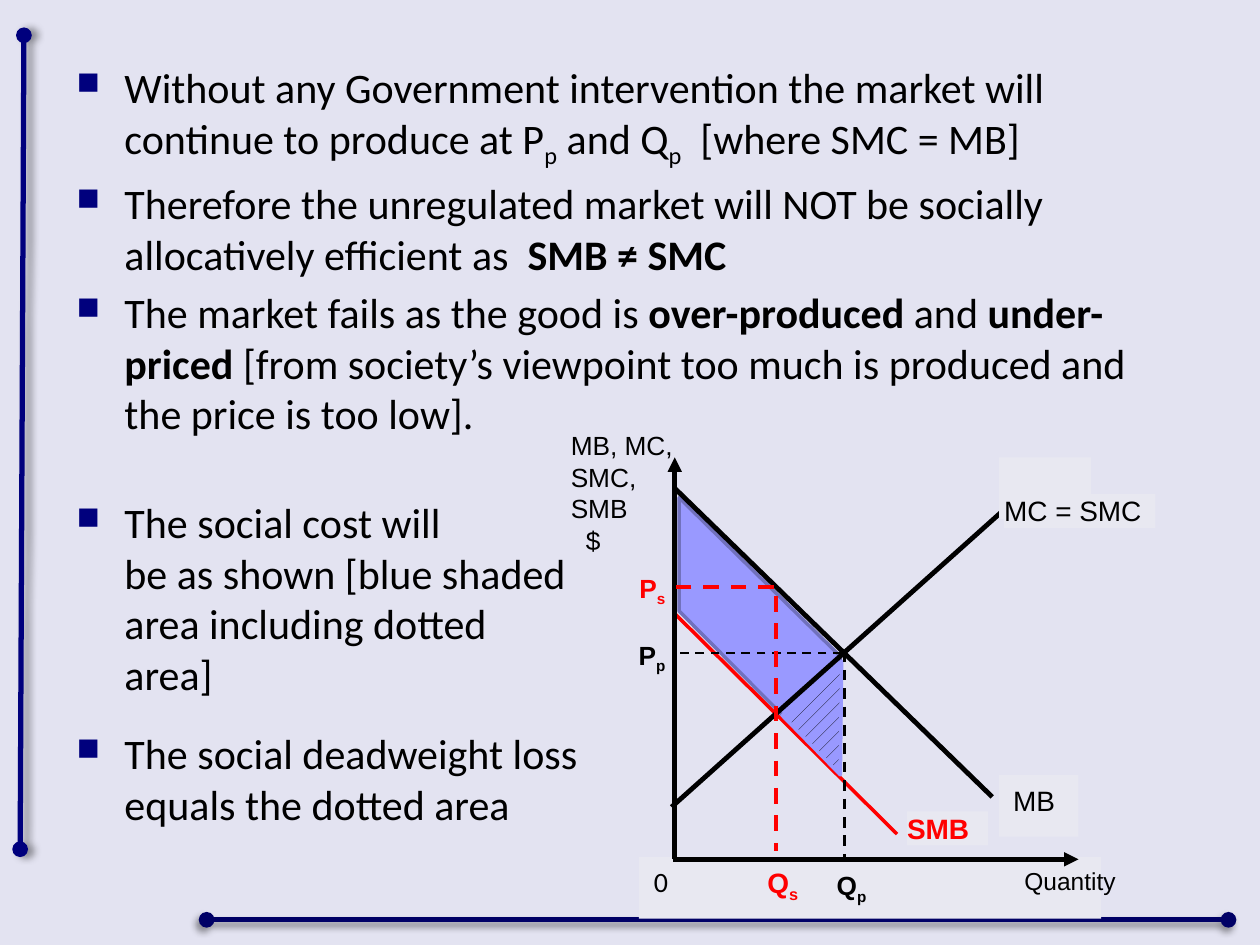
from dataclasses import dataclass

from lxml import etree
from pptx import Presentation
from pptx import util as u
from pptx.dml.color import RGBColor
from pptx.enum import dml, shapes, text
from pptx.oxml.ns import qn

COLUMNS, ROWS = 100, 75
WIDTH, HEIGHT = u.Inches(10), u.Inches(7.5)


@dataclass(frozen=True)
class Theme:
    background: str = "E3E3F1"
    panel: str = "E8E8F1"
    ink: str = "000000"
    social: str = "FF0000"
    bullet: str = "00007D"
    rule: str = "000066"
    shade: str = "9999FF"
    shade_edge: str = "7171BD"
    body_font: str = "Calibri"
    label_font: str = "Arial"
    body_size: float = 24
    label_size: float = 16
    axis_size: float = 15
    small_size: float = 14
    curve_width: float = 2.75


THEME = Theme()
# Run styles
PLAIN, BOLD, SUB, BOLD_SUB = (False, False), (True, False), (False, True), (True, True)


def rgb(value):
    return RGBColor.from_string(value)


def col(n):
    return u.Emu(round(WIDTH * n / COLUMNS))


def row(n):
    return u.Emu(round(HEIGHT * n / ROWS))


def place(left, top, width, height):
    return col(left), row(top), col(width), row(height)


def add_child(parent, tag, **attributes):
    return etree.SubElement(parent, qn(tag), attributes)


def add_run(paragraph, words, style, size, color, font):
    """Add one run; a line feed inside the words becomes a line break."""
    bold, subscript = style
    for index, part in enumerate(words.split("\n")):
        if index:
            paragraph.add_line_break()
        run = paragraph.add_run()
        run.text = part
        run.font.name, run.font.size = font, u.Pt(size)
        run.font.bold = bold
        run.font.color.rgb = rgb(color)
        if subscript:
            run._r.get_or_add_rPr().set("baseline", "-25000")


def set_bullet(paragraph, indent):
    properties = paragraph._p.get_or_add_pPr()
    properties.set("marL", str(indent))
    properties.set("indent", str(-indent))
    color = add_child(properties, "a:buClr")
    add_child(color, "a:srgbClr", val=THEME.bullet)
    add_child(properties, "a:buSzPct", val="75000")
    add_child(properties, "a:buChar", char="■")


def add_bullets(slide, box, items):
    frame = slide.shapes.add_textbox(*place(*box)).text_frame
    frame.word_wrap = True
    for index, (space, runs) in enumerate(items):
        paragraph = frame.paragraphs[0] if index == 0 else frame.add_paragraph()
        set_bullet(paragraph, col(3.8))
        paragraph.space_before = u.Pt(space)
        for words, style in runs:
            add_run(paragraph, words, style, THEME.body_size, THEME.ink, THEME.body_font)


def add_panel(slide, box):
    panel = slide.shapes.add_shape(shapes.MSO_SHAPE.RECTANGLE, *place(*box))
    panel.shadow.inherit = False
    panel.fill.solid()
    panel.fill.fore_color.rgb = rgb(THEME.panel)
    panel.line.fill.background()
    return panel


def add_label(slide, box, paragraphs, size, color=THEME.ink, font=THEME.label_font, panel=False):
    """Add a label without margins; paragraphs is a list of lists of runs."""
    shape = add_panel(slide, box) if panel else slide.shapes.add_textbox(*place(*box))
    frame = shape.text_frame
    frame.word_wrap = True
    frame.vertical_anchor = text.MSO_ANCHOR.TOP
    frame.margin_left = frame.margin_right = frame.margin_top = frame.margin_bottom = 0
    for index, runs in enumerate(paragraphs):
        paragraph = frame.paragraphs[0] if index == 0 else frame.add_paragraph()
        paragraph.alignment = text.PP_ALIGN.LEFT
        for words, style in runs:
            add_run(paragraph, words, style, size, color, font)
    return frame


def add_line(slide, start, end, color, width, dashed=False, head=None, tail=None, shadow=None):
    line = slide.shapes.add_connector(
        shapes.MSO_CONNECTOR.STRAIGHT, col(start[0]), row(start[1]), col(end[0]), row(end[1]))
    line.line.color.rgb = rgb(color)
    line.line.width = u.Pt(width)
    if dashed:
        line.line.dash_style = dml.MSO_LINE.DASH
    properties = line._element.spPr
    outline = properties.find(qn("a:ln"))
    for tag, kind in (("a:headEnd", head), ("a:tailEnd", tail)):
        if kind:
            add_child(outline, tag, type=kind)
    effects = add_child(properties, "a:effectLst")
    if shadow is not None:
        cast = add_child(effects, "a:outerShdw", blurRad=str(u.Pt(4)), dist=str(u.Pt(3)),
                         dir=str(shadow * 60000), algn="ctr", rotWithShape="0")
        tint = add_child(cast, "a:srgbClr", val=THEME.ink)
        add_child(tint, "a:alpha", val="40000")


def add_area(slide, points, edge, dotted=False):
    corners = [(col(x), row(y)) for x, y in points]
    builder = slide.shapes.build_freeform(*corners[0])
    builder.add_line_segments(corners[1:], close=True)
    area = builder.convert_to_shape()
    area.shadow.inherit = False
    if dotted:
        area.fill.patterned()
        area.fill.pattern = dml.MSO_PATTERN.PERCENT_10
        area.fill.fore_color.rgb = rgb(THEME.ink)
        area.fill.back_color.rgb = rgb(THEME.shade)
    else:
        area.fill.solid()
        area.fill.fore_color.rgb = rgb(THEME.shade)
    area.line.color.rgb = rgb(edge)
    area.line.width = u.Pt(2)


def add_frame_rules(slide):
    for start, end, color, angle in (((1.9, 2.8), (1.6, 67.4), THEME.bullet, 0),
                                     ((16.4, 73), (97.5, 73), THEME.rule, 135)):
        add_line(slide, start, end, color, 3, head="oval", tail="oval", shadow=angle)


def add_diagram(slide):
    # Social benefit curve and shaded cost areas
    add_line(slide, (53.45, 48.6), (71.2, 66.2), THEME.social, 2)
    add_label(slide, (72, 64.4, 6.4, 2.7), [[("SMB", BOLD)]], THEME.label_size,
              THEME.social, panel=True)
    add_area(slide, [(53.9, 39.5), (66.7, 52.1), (66.6, 61.3), (53.9, 48.5)], THEME.shade_edge)
    add_area(slide, [(66.7, 61.5), (62.1, 56.8), (66.8, 52.5)], THEME.shade, dotted=True)

    # Axis labels
    add_panel(slide, (50.7, 68, 36.7, 4.9))
    add_label(slide, (51.9, 68.6, 3.4, 3.3), [[("0", PLAIN)]], THEME.label_size,
              font=THEME.body_font)
    add_label(slide, (60.9, 68.7, 4, 2.7), [[("Q", BOLD), ("s", BOLD_SUB)]],
              THEME.label_size, THEME.social)
    add_label(slide, (66.4, 69, 4, 2.5), [[("Q", BOLD), ("p", BOLD_SUB)]], THEME.axis_size)
    add_label(slide, (81.3, 68.7, 8, 2.7), [[("Quantity", PLAIN)]], THEME.small_size)
    units = add_label(slide, (45.3, 34.1, 10.9, 10.1),
                      [[(name, PLAIN)] for name in ("MB, MC,", "SMC,", "SMB", "$")],
                      THEME.axis_size)
    units.paragraphs[-1]._p.get_or_add_pPr().set("marL", str(col(1.2)))
    for top, letter, color in ((45.4, "s", THEME.social), (50.7, "p", THEME.ink)):
        price = add_label(slide, (47.5, top, 5.3, 2.7), [[("P", BOLD), (letter, BOLD_SUB)]],
                          THEME.axis_size, color)
        price.paragraphs[0].alignment = text.PP_ALIGN.RIGHT

    # Axes and curves
    for start, end, arrow in (((53.4, 68.2), (85.6, 68.2), "triangle"),
                              ((53.55, 68.2), (53.55, 36.3), "triangle"),
                              ((53.3, 64.05), (80.7, 39.55), None),
                              ((53.55, 38.75), (78.75, 63.25), None)):
        add_line(slide, start, end, THEME.ink, THEME.curve_width, tail=arrow)

    # Curve labels
    add_panel(slide, (79.3, 61.5, 6.3, 4.9))
    add_label(slide, (80.4, 62.2, 4, 2.7), [[("MB", PLAIN)]], THEME.label_size)
    add_panel(slide, (79.3, 36.3, 7.3, 4.9))
    add_label(slide, (79.7, 39.2, 12, 2.7), [[("MC = SMC", PLAIN)]], THEME.label_size, panel=True)

    # Dashed guides from the two equilibria to the axes
    for start, end, color, width in (((66.8, 51.85), (53.4, 51.85), THEME.ink, 1.25),
                                     ((67, 51.7), (67, 68), THEME.ink, 1.5),
                                     ((61.6, 47.3), (61.6, 67.5), THEME.social, 2.25),
                                     ((61.4, 46.6), (53.6, 46.6), THEME.social, 2.25)):
        add_line(slide, start, end, color, width, dashed=True)


def main():
    presentation = Presentation()
    presentation.slide_width, presentation.slide_height = WIDTH, HEIGHT
    slide = presentation.slides.add_slide(presentation.slide_layouts[6])
    slide.background.fill.solid()
    slide.background.fill.fore_color.rgb = rgb(THEME.background)

    add_frame_rules(slide)
    # Each bullet: space before in points, then its runs
    add_bullets(slide, (5.1, 4.4, 90, 46.5), [
        (0, [("Without any Government intervention the market will continue to produce at P", PLAIN),
             ("p", SUB), (" and Q", PLAIN), ("p", SUB), ("  [where SMC = MB]", PLAIN)]),
        (4.8, [("Therefore the unregulated market will NOT be socially allocatively efficient as  ",
                PLAIN), ("SMB ≠ SMC", BOLD)]),
        (4.8, [("The market fails as the good is ", PLAIN), ("over-produced", BOLD),
               (" and ", PLAIN), ("under-priced ", BOLD),
               ("[from society’s viewpoint too much is produced and the price is too low].", PLAIN)]),
        (33.6, [("The social cost will\nbe as shown [blue shaded\narea including dotted\narea]",
                 PLAIN)]),
        (16.8, [("The social deadweight loss\nequals the dotted area", PLAIN)]),
    ])
    add_diagram(slide)
    presentation.save("out.pptx")


if __name__ == "__main__":
    main()
